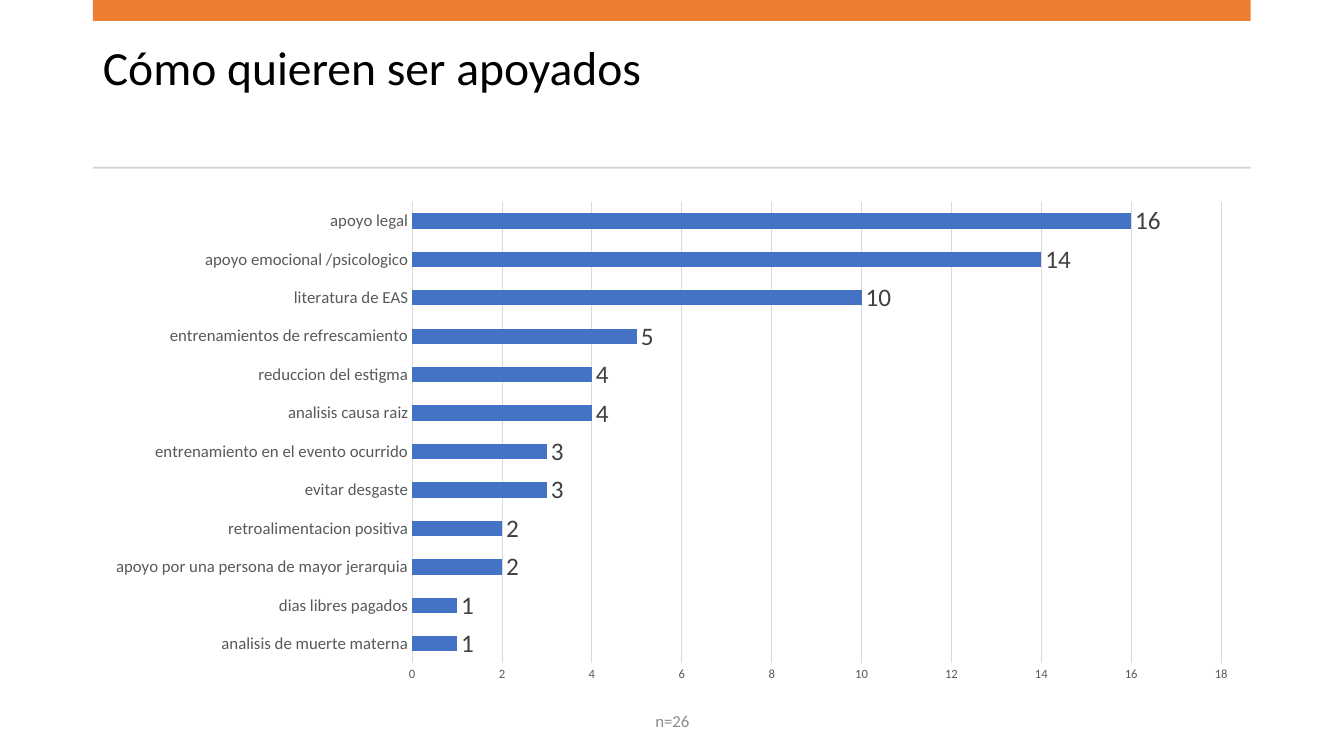
from dataclasses import dataclass

from pptx import Presentation
from pptx.chart.data import CategoryChartData
from pptx.dml.color import RGBColor as RGB
from pptx.enum.chart import XL_CHART_TYPE as ChartType
from pptx.enum.chart import XL_LABEL_POSITION as LabelPos
from pptx.enum.chart import XL_TICK_MARK as Tick
from pptx.enum.shapes import MSO_SHAPE as Shape
from pptx.enum.text import MSO_ANCHOR as Anchor
from pptx.enum.text import MSO_AUTO_SIZE as AutoSize
from pptx.enum.text import PP_ALIGN as Align
from pptx.util import Cm, Pt


@dataclass(frozen=True)
class Theme:
    font: str = "Calibri"
    title: RGB = RGB(0x00, 0x00, 0x00)
    accent: RGB = RGB(0xED, 0x7D, 0x31)
    rule: RGB = RGB(0xD5, 0xD5, 0xD5)
    bar: RGB = RGB(0x44, 0x72, 0xC4)
    grid: RGB = RGB(0xD9, 0xD9, 0xD9)
    axis: RGB = RGB(0x59, 0x59, 0x59)
    value: RGB = RGB(0x40, 0x40, 0x40)
    note: RGB = RGB(0x8C, 0x8C, 0x8C)
    title_size: Pt = Pt(34)
    value_size: Pt = Pt(18)
    category_size: Pt = Pt(12)
    note_size: Pt = Pt(12)
    base_size: Pt = Pt(10)
    scale_size: Pt = Pt(9)


def style_font(font, size, color):
    font.name = theme.font
    font.size = size
    font.color.rgb = color


theme = Theme()
left, width = Cm(2.34), Cm(29.18)
support = [
    ("analisis de muerte materna", 1),
    ("dias libres pagados", 1),
    ("apoyo por una persona de mayor jerarquia", 2),
    ("retroalimentacion positiva", 2),
    ("evitar desgaste", 3),
    ("entrenamiento en el evento ocurrido", 3),
    ("analisis causa raiz", 4),
    ("reduccion del estigma", 4),
    ("entrenamientos de refrescamiento", 5),
    ("literatura de EAS", 10),
    ("apoyo emocional /psicologico", 14),
    ("apoyo legal", 16),
]

prs = Presentation()
prs.slide_width, prs.slide_height = Cm(33.87), Cm(19.05)
s = prs.slides.add_slide(prs.slide_layouts[5])

title = s.shapes.title
title.left, title.top, title.width, title.height = left, Cm(0.94), width, Cm(3)
tf = title.text_frame
tf.auto_size = AutoSize.NONE
tf.word_wrap = True
tf.vertical_anchor = Anchor.TOP
tf.margin_top = Cm(0.18)
p = tf.paragraphs[0]
p.alignment = Align.LEFT
p.line_spacing = 0.9
r = p.add_run()
r.text = "Cómo quieren ser apoyados"
style_font(r.font, theme.title_size, theme.title)

for top, height, color in (
    (Cm(0), Cm(0.53), theme.accent),
    (Cm(4.2), Cm(0.05), theme.rule),
):
    sp = s.shapes.add_shape(Shape.RECTANGLE, left, top, width, height)
    sp.shadow.inherit = False
    sp.fill.solid()
    sp.fill.fore_color.rgb = color
    sp.line.fill.background()

data = CategoryChartData()
data.categories = [name for name, count in support]
data.add_series("Series 1", [count for name, count in support])
chart = s.shapes.add_chart(
    ChartType.BAR_CLUSTERED, left, Cm(4.83), width, Cm(12.6), data
).chart
chart.has_title = False
chart.has_legend = False
style_font(chart.font, theme.base_size, theme.title)

categories, scale = chart.category_axis, chart.value_axis
for axis, size in ((categories, theme.category_size), (scale, theme.scale_size)):
    axis.major_tick_mark = axis.minor_tick_mark = Tick.NONE
    axis.format.line.fill.background()
    style_font(axis.tick_labels.font, size, theme.axis)
categories.has_major_gridlines = False
scale.minimum_scale, scale.maximum_scale, scale.major_unit = 0, 18, 2
scale.has_major_gridlines = True
grid = scale.major_gridlines.format.line
grid.color.rgb = theme.grid
grid.width = Pt(0.75)

plot = chart.plots[0]
plot.gap_width = 150
plot.vary_by_categories = False
bars = plot.series[0]
bars.format.fill.solid()
bars.format.fill.fore_color.rgb = theme.bar
labels = bars.data_labels
labels.show_value = True
labels.position = LabelPos.OUTSIDE_END
style_font(labels.font, theme.value_size, theme.value)

note = s.shapes.add_textbox(Cm(11.23), Cm(17.65), Cm(11.43), Cm(1.02))
tf = note.text_frame
tf.word_wrap = True
tf.vertical_anchor = Anchor.MIDDLE
p = tf.paragraphs[0]
p.alignment = Align.CENTER
r = p.add_run()
r.text = "n=26"
style_font(r.font, theme.note_size, theme.note)

prs.save("out.pptx")
